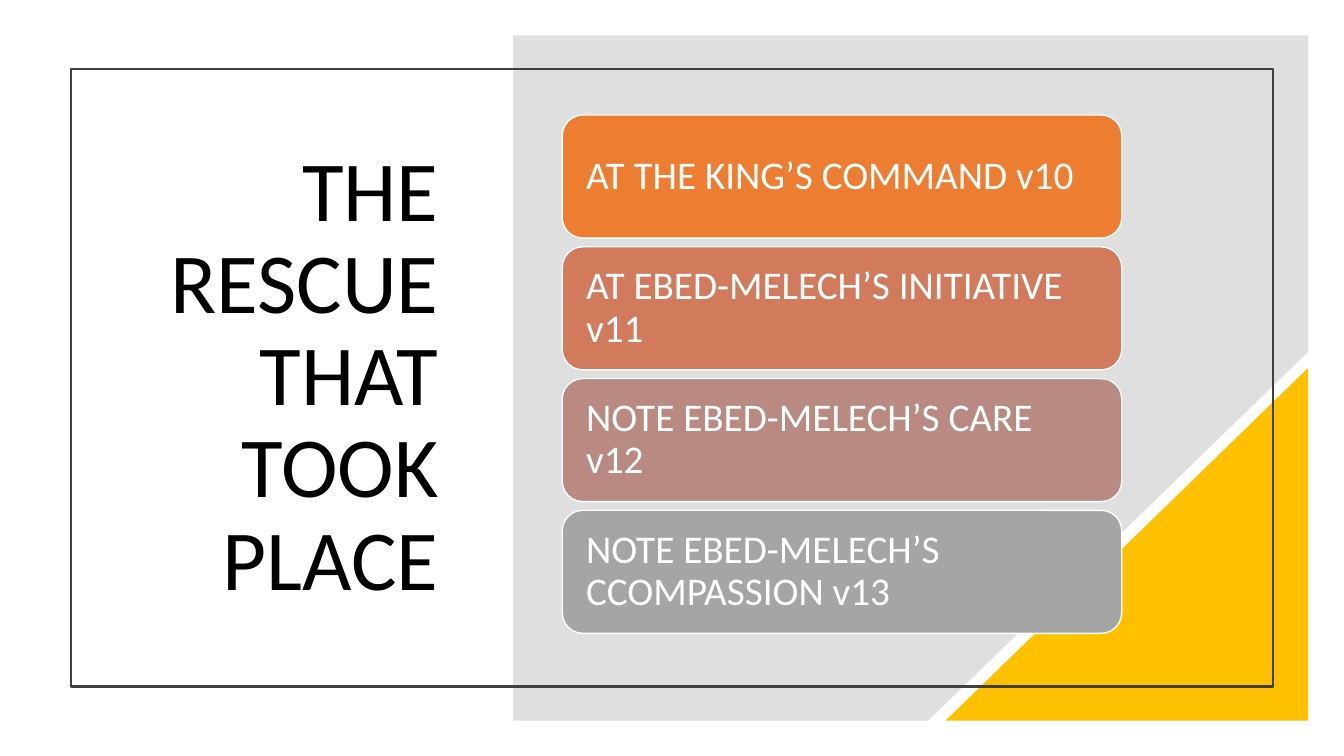
from dataclasses import dataclass

from lxml.etree import SubElement
from pptx import Presentation
from pptx.dml.color import RGBColor
from pptx.enum.shapes import MSO_SHAPE
from pptx.enum.text import MSO_ANCHOR, PP_ALIGN
from pptx.oxml.ns import qn
from pptx.shapes.autoshape import Shape
from pptx.slide import Slide
from pptx.util import Cm, Pt


@dataclass(frozen=True)
class Theme:
    font: str = "Calibri"
    title_size: float = 61
    point_size: float = 28
    title: str = "000000"
    light: str = "FFFFFF"
    panel: str = "808080"
    panel_opacity: int = 25
    corner: str = "FFC000"
    frame: str = "404040"


@dataclass(frozen=True)
class Box:
    left: float
    top: float
    width: float
    height: float

    def lengths(self) -> list[Cm]:
        return [Cm(self.left), Cm(self.top), Cm(self.width), Cm(self.height)]


@dataclass(frozen=True)
class Point:
    text: str
    color: str


THEME = Theme()
TITLE_BOX = Box(2.79, 3.3, 8.51, 12.45)
CORNER_BOX = Box(23.83, 9.27, 9.14, 8.89)
FRAME_BOX = Box(1.78, 1.73, 30.3, 15.57)
FIRST_POINT_BOX = Box(14.17, 2.9, 14.1, 3.1)
POINT_PITCH = 3.32
PANEL_OUTLINE = [(12.93, 0.89), (32.97, 0.89), (32.97, 8.86), (23.39, 18.16), (12.93, 18.16)]
POINTS = [
    Point("AT THE KING’S COMMAND v10", "ED7D31"),
    Point("AT EBED-MELECH’S INITIATIVE v11", "D17B5C"),
    Point("NOTE EBED-MELECH’S CARE v12", "B98A82"),
    Point("NOTE EBED-MELECH’S CCOMPASSION v13", "A5A5A5"),
]


def paint(shape: Shape, fill: str | None, line: str | None = None, line_width: float = 1) -> None:
    shape.shadow.inherit = False
    if fill:
        shape.fill.solid()
        shape.fill.fore_color.rgb = RGBColor.from_string(fill)
    else:
        shape.fill.background()
    if line:
        shape.line.color.rgb = RGBColor.from_string(line)
        shape.line.width = Pt(line_width)
    else:
        shape.line.fill.background()


def write(shape: Shape, text: str, size: float, color: str, alignment: PP_ALIGN, margin: float) -> None:
    frame = shape.text_frame
    frame_format = {
        "word_wrap": True,
        "vertical_anchor": MSO_ANCHOR.MIDDLE,
        "margin_left": Cm(margin),
        "margin_right": Cm(margin),
    }
    for name, value in frame_format.items():
        setattr(frame, name, value)
    paragraph = frame.paragraphs[0]
    paragraph.alignment = alignment
    paragraph.line_spacing = 0.9
    run = paragraph.add_run()
    run.text = text
    for name, value in {"name": THEME.font, "size": Pt(size)}.items():
        setattr(run.font, name, value)
    run.font.color.rgb = RGBColor.from_string(color)


def add_panel(slide: Slide) -> None:
    start, *others = [(Cm(x), Cm(y)) for x, y in PANEL_OUTLINE]
    builder = slide.shapes.build_freeform(*start)
    builder.add_line_segments(others, close=True)
    panel = builder.convert_to_shape()
    paint(panel, THEME.panel)
    color = panel.element.spPr.find(qn("a:solidFill"))[0]
    SubElement(color, qn("a:alpha"), val=str(THEME.panel_opacity * 1000))


def add_point(slide: Slide, point: Point, index: int) -> None:
    first = FIRST_POINT_BOX
    box = Box(first.left, first.top + index * POINT_PITCH, first.width, first.height)
    shape = slide.shapes.add_shape(MSO_SHAPE.ROUNDED_RECTANGLE, *box.lengths())
    paint(shape, point.color, THEME.light)
    write(shape, point.text, THEME.point_size, THEME.light, PP_ALIGN.LEFT, 0.45)


def main() -> None:
    presentation = Presentation()
    presentation.slide_width = Cm(33.87)
    presentation.slide_height = Cm(19.05)
    slide = presentation.slides.add_slide(presentation.slide_layouts[6])

    # Title
    title = slide.shapes.add_textbox(*TITLE_BOX.lengths())
    write(title, "THE RESCUE THAT TOOK PLACE", THEME.title_size, THEME.title, PP_ALIGN.RIGHT, 0.25)

    # Grey panel with its yellow corner
    add_panel(slide)
    corner = slide.shapes.add_shape(MSO_SHAPE.RIGHT_TRIANGLE, *CORNER_BOX.lengths())
    paint(corner, THEME.corner)
    corner.element.spPr.find(qn("a:xfrm")).set("flipH", "1")

    # Thin frame
    frame = slide.shapes.add_shape(MSO_SHAPE.RECTANGLE, *FRAME_BOX.lengths())
    paint(frame, None, THEME.frame, 1.5)

    # Stacked points
    for index, point in enumerate(POINTS):
        add_point(slide, point, index)

    presentation.save("out.pptx")


if __name__ == "__main__":
    main()
